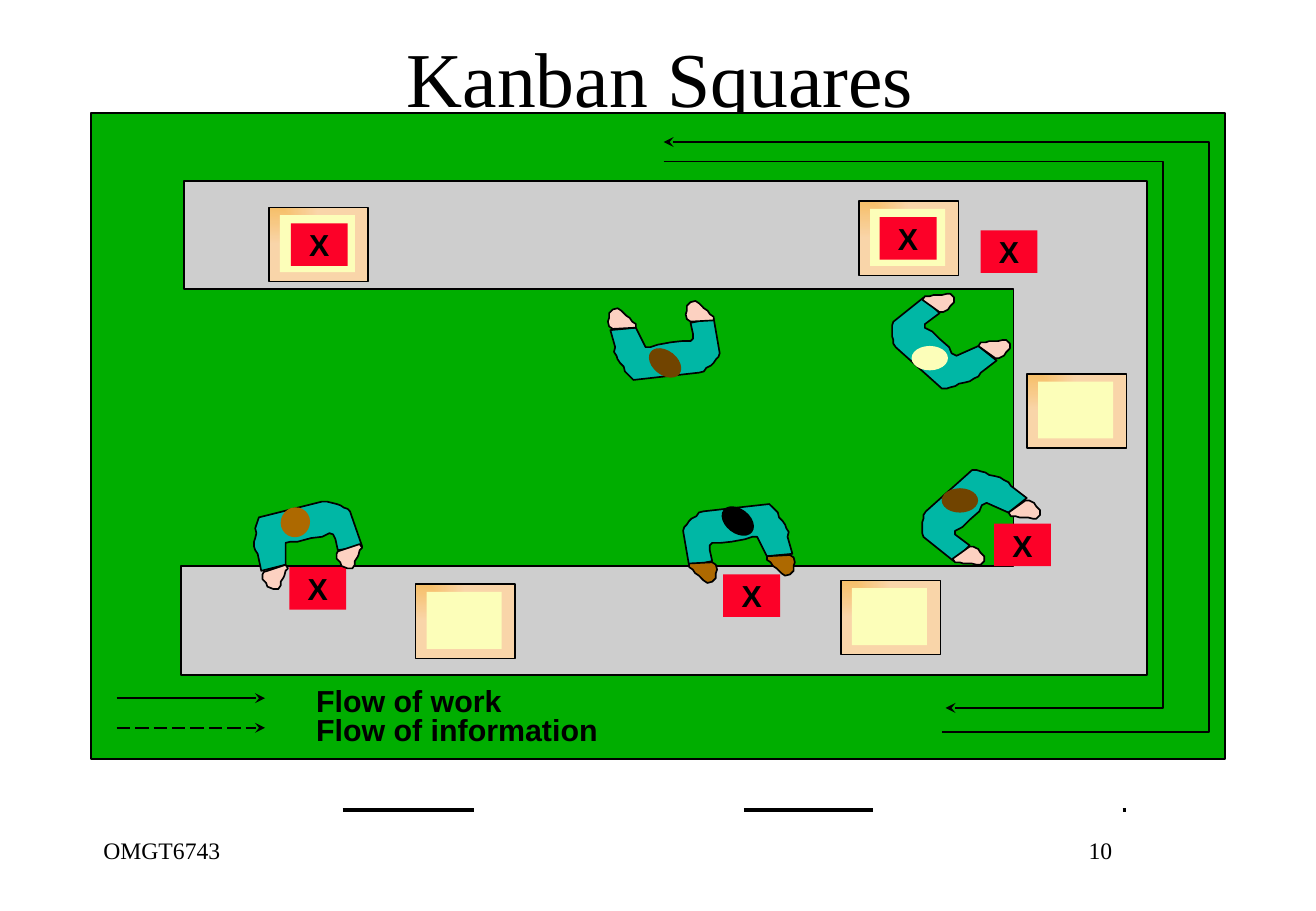
import pptx
import pptx.dml.color
import pptx.enum.dml
import pptx.enum.shapes
import pptx.enum.text
import pptx.oxml
import pptx.oxml.ns
import pptx.util

Cm = pptx.util.Cm
Pt = pptx.util.Pt
SHAPE = pptx.enum.shapes.MSO_SHAPE
ALIGN = pptx.enum.text.PP_ALIGN
ANCHOR = pptx.enum.text.MSO_ANCHOR

OUTLINE_UNIT = Cm(0.0254)  # outline points are hundredths of an inch
BLACK, FLOOR, COUNTER, CARD = "000000", "00AE00", "CECECE", "FC0128"
CREAM, SHIRT, SKIN, TAN, BROWN = "FCFEB9", "00B7A5", "FCD1C1", "AD6900", "714400"

COUNTER_OUTLINE = [(76, 56), (869, 56), (869, 463), (74, 463),
                   (74, 373), (759, 373), (759, 145), (76, 145)]
WORK_FLOW = [(471, 40), (882, 40), (882, 490), (703, 490)]
INFORMATION_FLOW = [(700, 510), (920, 510), (920, 24), (471, 24)]
TRAYS = [(3.71, 1.98), (16.05, 1.85), (19.56, 5.46), (15.67, 9.78), (6.78, 9.86)]
CARDS = [(4.17, 2.31), (16.48, 2.18), (18.59, 2.46),
         (13.21, 9.65), (4.14, 9.5), (18.87, 8.59)]

# Each pose: size, body outline, hand outline from the wrist, wrists, head (centre, size, turn)
FACING = dict(
    size=(90, 51),
    body=[(69, 43), (90, 41), (86, 27), (87, 23), (85, 20), (84, 17), (82, 14), (79, 11),
          (78, 7), (76, 5), (73, 2), (71, 0), (17, 6), (13, 7), (11, 10), (7, 12), (5, 14),
          (3, 17), (1, 19), (0, 22), (5, 51), (24, 47), (22, 38), (22, 34), (24, 32),
          (31, 32), (40, 31), (51, 29), (57, 27), (61, 27)],
    hand=[(0, 0), (0, 3), (3, 5), (5, 8), (8, 10), (10, 12), (12, 14), (15, 16), (19, 15),
          (22, 12), (22, 8), (23, 5), (22, 1), (19, -1)],
    wrists=[(69, 43), (5, 49)], head=((45, 14), (0.76, 0.51), 38))
DIAGONAL = dict(
    size=(86, 75),
    body=[(71, 35), (86, 23), (73, 13), (71, 10), (67, 8), (64, 6), (60, 5), (55, 4),
          (52, 2), (48, 1), (45, 0), (41, 0), (3, 34), (1, 37), (1, 40), (0, 43), (0, 46),
          (0, 49), (0, 52), (1, 55), (26, 75), (39, 62), (31, 56), (27, 53), (27, 50),
          (33, 47), (39, 41), (47, 34), (49, 29), (53, 27)],
    hand=[(0, 0), (2, 3), (6, 3), (9, 4), (13, 4), (16, 4), (20, 5), (23, 5), (26, 2),
          (26, -2), (23, -5), (21, -8), (17, -10), (14, -10)],
    wrists=[(71, 35), (25, 73)], head=((31, 25), (0.76, 0.51), 0))
TILTED = dict(
    size=(89, 58),
    body=[(26, 52), (6, 57), (3, 43), (1, 40), (0, 37), (0, 33), (1, 30), (2, 26), (1, 22),
          (2, 19), (3, 16), (4, 13), (56, 0), (60, 0), (64, 1), (68, 2), (71, 3), (74, 5),
          (77, 6), (79, 8), (89, 37), (69, 40), (67, 31), (65, 27), (62, 26), (56, 29),
          (47, 30), (36, 33), (30, 33), (26, 34)],
    hand=[(0, 0), (2, 3), (0, 5), (-1, 9), (-2, 11), (-4, 14), (-4, 17), (-6, 20),
          (-10, 20), (-15, 18), (-16, 15), (-19, 12), (-19, 8), (-18, 6)],
    wrists=[(26, 52), (87, 35)], head=((34, 17), (0.63, 0.61), 118))
# left, top, pose, flip across, flip down, hand colour, head colour
WORKERS = [(12.37, 8.18, FACING, False, False, TAN, BLACK),
           (17.37, 7.47, DIAGONAL, False, False, SKIN, BROWN),
           (16.74, 3.86, DIAGONAL, False, True, SKIN, CREAM),
           (10.85, 4.29, FACING, True, True, SKIN, BROWN),
           (3.4, 8.13, TILTED, False, False, SKIN, TAN)]


def color(value):
    return pptx.dml.color.RGBColor.from_string(value)


def style(shape, fill=None, line=None):
    shape.shadow.inherit = False
    if fill:
        shape.fill.solid()
        shape.fill.fore_color.rgb = color(fill)
    else:
        shape.fill.background()
    if line:
        shape.line.color.rgb = color(line)
        shape.line.width = Pt(1)
    else:
        shape.line.fill.background()


def add_preset(slide, kind, left, top, width, height, fill, line=None):
    shape = slide.shapes.add_shape(kind, Cm(left), Cm(top), Cm(width), Cm(height))
    style(shape, fill, line)
    return shape


def add_outline(slide, left, top, points, fill=None, close=True):
    builder = slide.shapes.build_freeform(*points[0], scale=OUTLINE_UNIT)
    builder.add_line_segments(points[1:], close=close)
    shape = builder.convert_to_shape(Cm(left), Cm(top))
    style(shape, fill, BLACK)
    return shape


def add_arrowhead(shape):
    shape.line._get_or_add_ln().append(pptx.oxml.parse_xml(
        '<a:tailEnd %s type="stealth"/>' % pptx.oxml.ns.nsdecls("a")))


def add_line(slide, left, right, top, width):
    line = slide.shapes.add_connector(
        pptx.enum.shapes.MSO_CONNECTOR.STRAIGHT, Cm(left), Cm(top), Cm(right), Cm(top))
    line.line.color.rgb = color(BLACK)
    line.line.width = Pt(width)
    line._element.spPr.append(pptx.oxml.parse_xml(
        "<a:effectLst %s/>" % pptx.oxml.ns.nsdecls("a")))
    return line


def write(shape, text, size, font="Times New Roman", bold=False,
          align=ALIGN.LEFT, anchor=ANCHOR.TOP, wrap=True):
    frame = shape.text_frame
    frame.word_wrap = wrap
    frame.vertical_anchor = anchor
    paragraph = frame.paragraphs[0]
    paragraph.alignment = align
    run = paragraph.add_run()
    run.text = text
    run.font.size = Pt(size)
    run.font.name = font
    run.font.bold = bold
    run.font.color.rgb = color(BLACK)


def add_text(slide, left, top, width, height, text, size, **options):
    box = slide.shapes.add_textbox(Cm(left), Cm(top), Cm(width), Cm(height))
    write(box, text, size, **options)


def draw_tray(slide, left, top):
    tray = add_preset(slide, SHAPE.RECTANGLE, left, top, 2.08, 1.55, CREAM, BLACK)
    tray.fill.gradient()
    for stop, value in zip(tray.fill.gradient_stops, ("F6BF69", "F9D5A9")):
        stop.color.rgb = color(value)
    linear = tray._element.spPr.find(".//" + pptx.oxml.ns.qn("a:lin"))
    linear.getparent().replace(linear, pptx.oxml.parse_xml(
        '<a:path %s path="rect"><a:fillToRect r="100000" b="100000"/></a:path>'
        % pptx.oxml.ns.nsdecls("a")))
    add_preset(slide, SHAPE.RECTANGLE, left + 0.23, top + 0.16, 1.57, 1.19, CREAM)


def draw_card(slide, left, top):
    card = add_preset(slide, SHAPE.RECTANGLE, left, top, 1.19, 0.89, CARD)
    write(card, "X", 18, "Arial", True, ALIGN.CENTER, ANCHOR.MIDDLE, wrap=False)


def draw_worker(slide, left, top, pose, across, down, hand_color, head_color):
    """Draw a worker seen from above, flipped across or down inside the pose's size."""
    width, height = pose["size"]

    def place(x, y):
        return (width - x if across else x, height - y if down else y)

    add_outline(slide, left, top, [place(*point) for point in pose["body"]], SHIRT)
    for wrist_x, wrist_y in pose["wrists"]:
        hand = [place(wrist_x + x, wrist_y + y) for x, y in pose["hand"]]
        add_outline(slide, left, top, hand, hand_color)
    center, (head_width, head_height), turn = pose["head"]
    x, y = place(*center)
    head = add_preset(slide, SHAPE.OVAL, left + x * 0.0254 - head_width / 2,
                      top + y * 0.0254 - head_height / 2, head_width, head_height, head_color)
    head.rotation = turn


def draw_legend(slide, left, top):
    entries = [("Flow of work", 4.39, None),
               ("Flow of information", 6.4, pptx.enum.dml.MSO_LINE.LONG_DASH)]
    for index, (label, width, dash) in enumerate(entries):
        row = top + index * 0.62
        line = add_line(slide, left, left + 3.1, row, 1)
        if dash:
            line.line.dash_style = dash
        add_arrowhead(line)
        add_text(slide, left + 3.92, row - 0.47, width, 1.02, label, 18,
                 font="Arial", bold=True, wrap=False)


def draw_work_cell(slide, left, top, width, height):
    add_preset(slide, SHAPE.RECTANGLE, left, top, width, height, FLOOR, BLACK)
    add_outline(slide, left, top, COUNTER_OUTLINE, COUNTER)
    for draw, places in ((draw_tray, TRAYS), (draw_card, CARDS), (draw_worker, WORKERS)):
        for x, y, *details in places:
            draw(slide, left + x, top + y, *details)
    for flow in (WORK_FLOW, INFORMATION_FLOW):
        add_arrowhead(add_outline(slide, left, top, flow, close=False))
    draw_legend(slide, left + 0.53, top + 12.24)


def draw_footer(slide, left, top, width):
    for start, end in ((5.25, 8), (13.64, 16.33), (21.56, 21.62)):
        add_line(slide, left + start, left + end, top, 2)
    add_text(slide, left, top + 0.41, 5.28, 1.27, "OMGT6743", 14)
    add_text(slide, left + width - 5.28, top + 0.41, 5.28, 1.27, "10", 14, align=ALIGN.RIGHT)


def main():
    presentation = pptx.Presentation()
    presentation.slide_width, presentation.slide_height = Cm(27.51), Cm(19.05)
    slide = presentation.slides.add_slide(presentation.slide_layouts[6])
    draw_footer(slide, 1.91, 16.94, 21.59)
    add_text(slide, 1.07, 0, 25.45, 3.18, "Kanban Squares", 46,
             align=ALIGN.CENTER, anchor=ANCHOR.MIDDLE)
    draw_work_cell(slide, 1.91, 2.36, 23.7, 13.51)
    presentation.save("out.pptx")


if __name__ == "__main__":
    main()
